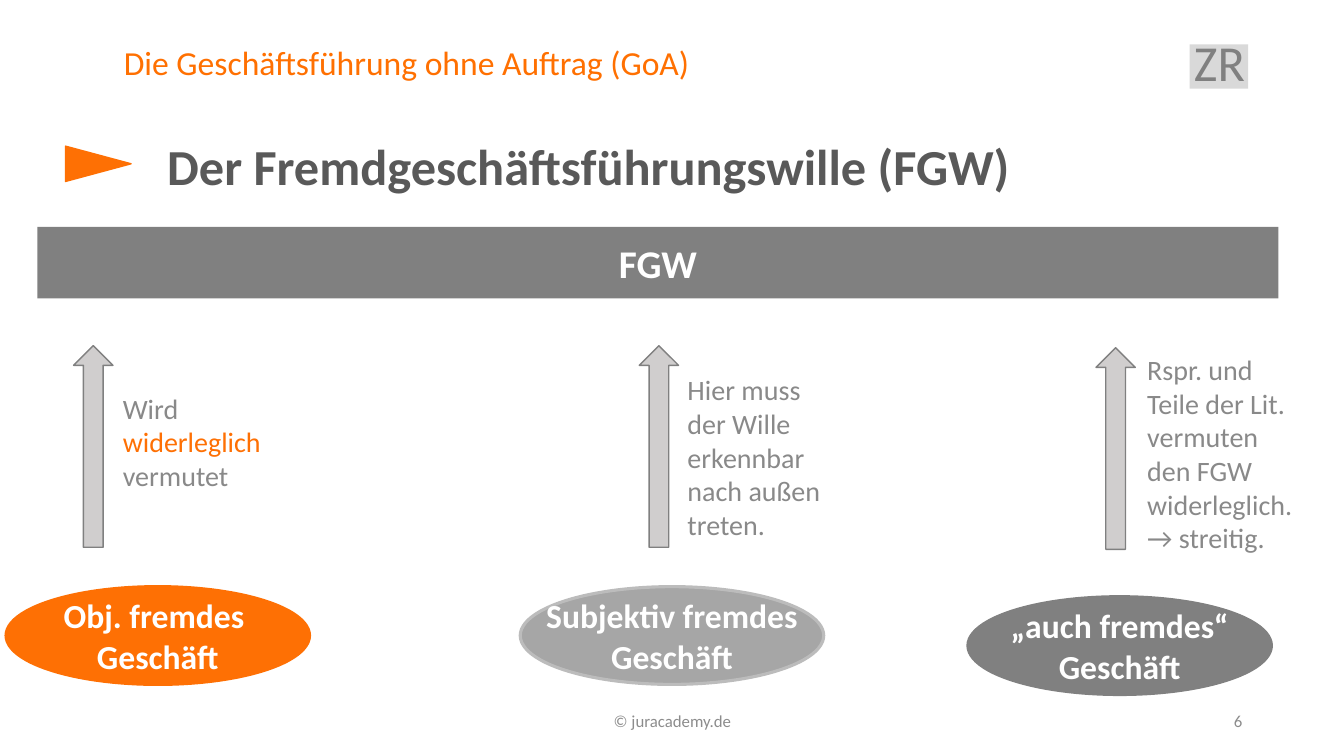
import pptx
import pptx.util
import pptx.dml.color
import pptx.enum.shapes
import pptx.enum.text

WIDTH, HEIGHT = 13.33, 7.5
ORANGE, DARK, GRAY, NOTE, WHITE = "FE7004", "595959", "808080", "898989", "FFFFFF"
SHAPES = pptx.enum.shapes.MSO_SHAPE
ALIGN = pptx.enum.text.PP_ALIGN
ANCHOR = pptx.enum.text.MSO_ANCHOR


def color(value):
    """Turn a hex string into a colour."""
    return pptx.dml.color.RGBColor.from_string(value)


def inches(box):
    """Turn left, top, width and height into lengths."""
    return [pptx.util.Inches(value) for value in box]


def write(shape, paragraphs, size, ink, align=ALIGN.LEFT, anchor=ANCHOR.TOP,
          bold=False, wrap=True, spacing=None, accent=None):
    """Fill a shape with paragraphs of runs; runs equal to accent turn orange."""
    frame = shape.text_frame
    frame.word_wrap = wrap
    frame.vertical_anchor = anchor
    for index, spans in enumerate(paragraphs):
        para = frame.paragraphs[0] if index == 0 else frame.add_paragraph()
        para.alignment = align
        if spacing:
            para.line_spacing = spacing
        for text in spans:
            span = para.add_run()
            span.text = text
            span.font.name = "Calibri"
            span.font.size = pptx.util.Pt(size)
            span.font.bold = bold
            span.font.color.rgb = color(ORANGE if text == accent else ink)


def add_text(page, box, paragraphs, size, ink, **style):
    """Add a text box."""
    write(page.shapes.add_textbox(*inches(box)), paragraphs, size, ink, **style)


def add_block(page, kind, box, fill, line=None, weight=1):
    """Add a flat preset shape and return it."""
    shape = page.shapes.add_shape(kind, *inches(box))
    shape.shadow.inherit = False
    shape.fill.solid()
    shape.fill.fore_color.rgb = color(fill)
    if line:
        shape.line.color.rgb = color(line)
        shape.line.width = pptx.util.Pt(weight)
    else:
        shape.line.fill.background()
    return shape


def add_header(page, left, top):
    """Place the topic line and the subject badge."""
    add_block(page, SHAPES.RECTANGLE, (left + 10.67, top + 0.03, 0.58, 0.44), "D9D9D9")
    add_text(page, (left, top, 9.99, 0.47),
             [["Die Geschäftsführung ohne Auftrag (GoA)"]], 24, "FF7001", spacing=0.9)
    add_text(page, (left + 10.53, top - 0.08, 0.87, 0.75), [["ZR"]], 36, GRAY,
             align=ALIGN.CENTER, spacing=0.9)


def add_heading(page, left, top):
    """Place the heading with its sideways triangle and the bar below."""
    marker = add_block(page, SHAPES.ISOSCELES_TRIANGLE,
                       (left + 0.43, top + 0.01, 0.35, 0.65), ORANGE, ORANGE)
    marker.rotation = 90
    add_text(page, (left + 1.19, top, 9.13, 0.71),
             [["Der Fremdgeschäftsführungswille (FGW)"]], 36, DARK, bold=True)
    bar = add_block(page, SHAPES.RECTANGLE, (left, top + 0.96, 12.31, 0.71), GRAY)
    write(bar, [["FGW"]], 28, WHITE, align=ALIGN.CENTER, anchor=ANCHOR.MIDDLE, bold=True)


def add_case(page, arrow, oval, note, label, reason, fill, line):
    """Place one kind of business: oval, upward arrow and reason beside it."""
    ellipse = add_block(page, SHAPES.OVAL, (*oval, 3.01, 0.97), fill, line, 2.25)
    write(ellipse, label, 24, WHITE, align=ALIGN.CENTER, anchor=ANCHOR.MIDDLE,
          bold=True, wrap=False)
    add_block(page, SHAPES.UP_ARROW, (*arrow, 0.39, 2), "D0CECE", GRAY)
    add_text(page, note, reason, 20, NOTE, accent="widerleglich")


def add_footer(page, top):
    """Place the copyright line and the page number."""
    for left, width, text, align in ((4.42, 4.5, "© juracademy.de", ALIGN.CENTER),
                                     (9.42, 3, "6", ALIGN.RIGHT)):
        add_text(page, (left, top, width, 0.4), [[text]], 12, "8C8C8C",
                 align=align, anchor=ANCHOR.MIDDLE)


def main():
    """Build and save the slide."""
    deck = pptx.Presentation()
    deck.slide_width = pptx.util.Inches(WIDTH)
    deck.slide_height = pptx.util.Inches(HEIGHT)
    page = deck.slides.add_slide(deck.slide_layouts[6])
    add_header(page, 1.13, 0.41)
    add_heading(page, 0.37, 1.29)
    add_case(page, (0.73, 3.43), (0.06, 5.82), (1.12, 3.83, 1.64, 1.11),
             [["Obj. fremdes "], ["Geschäft"]],
             [["Wird ", "widerleglich", " vermutet"]], ORANGE, ORANGE)
    add_case(page, (6.34, 3.43), (5.16, 5.82), (6.72, 3.65, 1.71, 1.78),
             [["Subjektiv fremdes"], ["Geschäft"]],
             [["Hier muss der Wille erkennbar nach außen treten."]], "A6A6A6", "BCBCBC")
    add_case(page, (10.87, 3.45), (9.6, 5.92), (11.28, 3.45, 1.64, 2.12),
             [["„auch fremdes“"], ["Geschäft"]],
             [["Rspr. und Teile der Lit. vermuten den FGW widerleglich."],
              ["→ streitig."]], GRAY, GRAY)
    add_footer(page, 6.95)
    deck.save("out.pptx")


if __name__ == "__main__":
    main()
